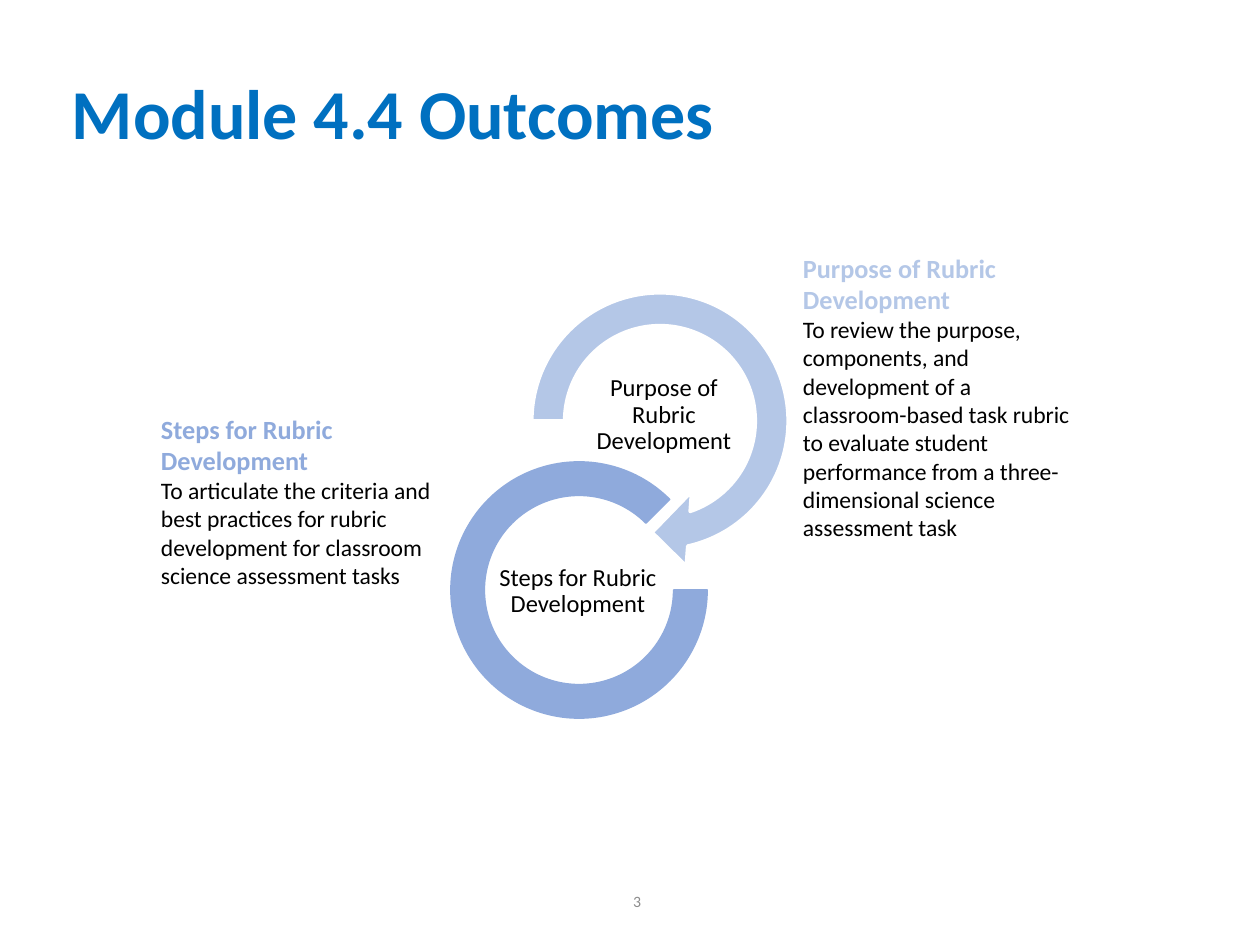
import pptx
import pptx.util
import pptx.dml.color
import pptx.enum.shapes
import pptx.enum.text

PX = 914400 / 126
FONT = "Calibri"
COLORS = {
    "title": "0070C0",
    "purpose": "B4C7E7",
    "steps": "8FAADC",
    "body": "000000",
    "number": "8C8C8C",
    "white": "FFFFFF",
}
ALIGN = pptx.enum.text.PP_ALIGN
ANCHOR = pptx.enum.text.MSO_ANCHOR
SHAPE = pptx.enum.shapes.MSO_SHAPE


def px(length):
    return pptx.util.Emu(round(length * PX))


def rgb(name):
    return pptx.dml.color.RGBColor.from_string(COLORS[name])


def add_text(slide, box, paragraphs, align=ALIGN.LEFT, anchor=ANCHOR.MIDDLE,
             spacing=1.0, insets=(9, 5)):
    """Add a text box; each paragraph is (text, size, color, bold)."""
    text_box = slide.shapes.add_textbox(*map(px, box))
    frame = text_box.text_frame
    frame.word_wrap = True
    frame.vertical_anchor = anchor
    frame.margin_left = frame.margin_right = px(insets[0])
    frame.margin_top = frame.margin_bottom = px(insets[1])
    for index, (text, size, color, bold) in enumerate(paragraphs):
        paragraph = frame.add_paragraph() if index else frame.paragraphs[0]
        paragraph.alignment = align
        paragraph.line_spacing = spacing
        run = paragraph.add_run()
        run.text = text
        run.font.name = FONT
        run.font.size = pptx.util.Pt(size)
        run.font.bold = bold
        run.font.color.rgb = rgb(color)
    return frame


def add_ring(slide, preset, box, adjustments, fill, line, line_width):
    ring = slide.shapes.add_shape(preset, *map(px, box))
    ring.shadow.inherit = False
    for index, value in enumerate(adjustments):
        ring.adjustments[index] = value
    ring.fill.solid()
    ring.fill.fore_color.rgb = rgb(fill)
    ring.line.color.rgb = rgb(line)
    ring.line.width = pptx.util.Pt(line_width)


def add_ring_label(slide, left, top, text):
    add_text(slide, (left, top, 166, 83), [(text, 14, "body", False)],
             align=ALIGN.CENTER, spacing=0.9, insets=(1, 1))


def add_outcome(slide, box, heading, description, color):
    frame = add_text(slide, box,
                     [(heading, 15, color, True),
                      (description, 13.5, "body", False)],
                     anchor=ANCHOR.TOP)
    frame.auto_size = pptx.enum.text.MSO_AUTO_SIZE.SHAPE_TO_FIT_TEXT


def main():
    deck = pptx.Presentation()
    deck.slide_width, deck.slide_height = px(1260), px(945)
    slide = deck.slides.add_slide(deck.slide_layouts[6])
    purpose = "Purpose of Rubric Development"
    steps = "Steps for Rubric Development"

    add_text(slide, (371, 876, 283, 50), [("3", 9, "number", False)],
             align=ALIGN.RIGHT, insets=(13, 6))
    add_text(slide, (63, 38, 1134, 157),
             [("Module 4.4 Outcomes", 40, "title", True)], spacing=0.9)

    add_ring(slide, SHAPE.CIRCULAR_ARROW, (511, 272, 298, 298),
             (0.11, 11.42, 45, 108, 0.125), "purpose", "white", 2)
    add_ring_label(slide, 581, 374, purpose)
    add_ring(slide, SHAPE.BLOCK_ARC, (451, 462, 256, 256),
             (0, 189, 0.13), "steps", "steps", 1)
    add_ring_label(slide, 495, 550, steps)

    add_outcome(slide, (794, 247, 294, 302), purpose,
                "To review the purpose, components, and development of a "
                "classroom-based task rubric to evaluate student performance "
                "from a three-dimensional science assessment task", "purpose")
    add_outcome(slide, (152, 408, 294, 188), steps,
                "To articulate the criteria and best practices for rubric "
                "development for classroom science assessment tasks", "steps")

    deck.save("out.pptx")


if __name__ == "__main__":
    main()
